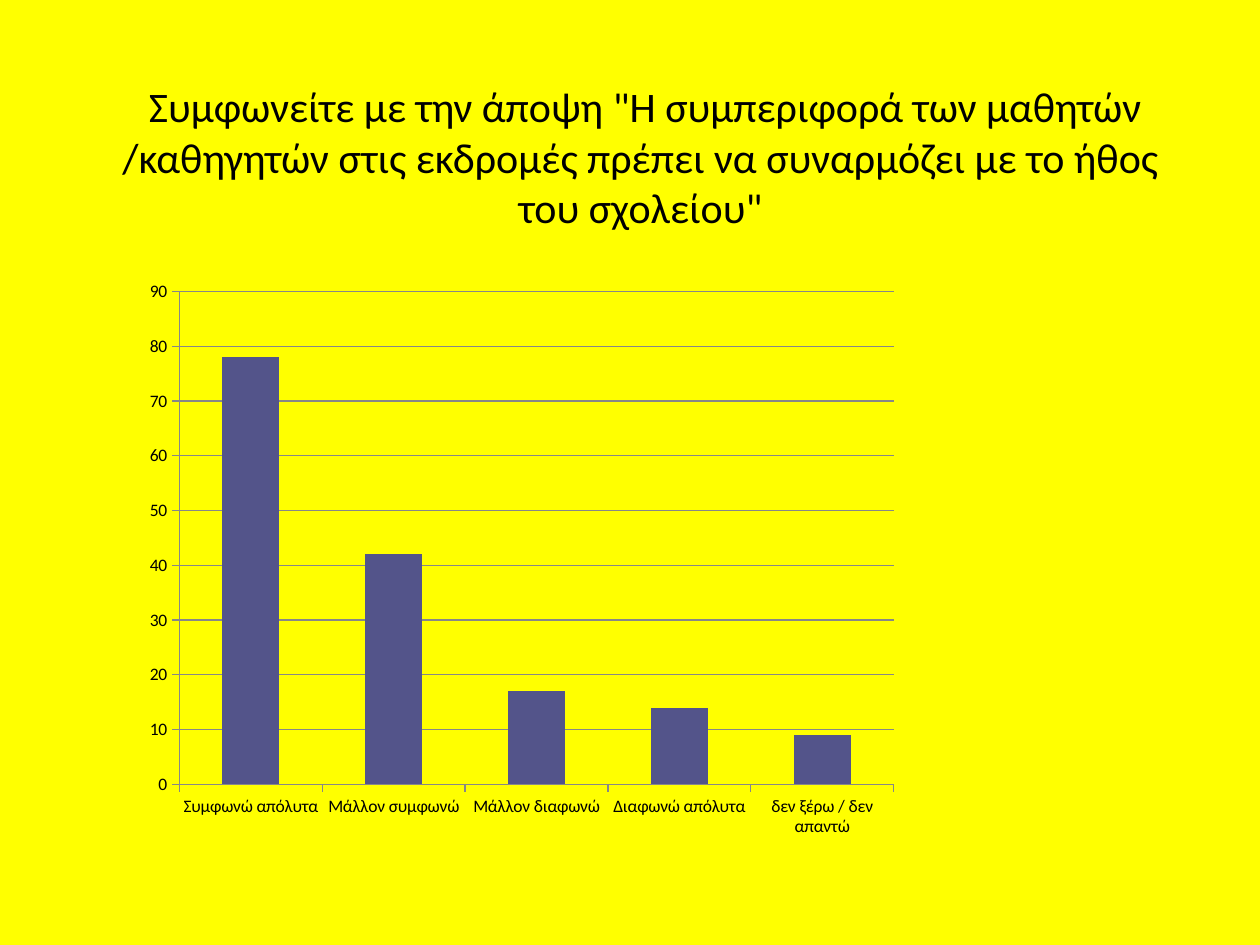
from dataclasses import dataclass

from pptx import Presentation
from pptx.chart.data import CategoryChartData
from pptx.dml.color import RGBColor
from pptx.enum.chart import XL_CHART_TYPE as ChartType, XL_TICK_MARK as TickMark
from pptx.enum.text import MSO_ANCHOR as Anchor, PP_ALIGN as Align
from pptx.oxml import parse_xml
from pptx.oxml.ns import nsdecls, qn
from pptx.util import Emu, Pt


@dataclass(frozen=True)
class Theme:
    """Colours, font and type sizes of the slide."""
    background: RGBColor = RGBColor(0xFF, 0xFF, 0x00)
    ink: RGBColor = RGBColor(0x00, 0x00, 0x00)
    bar: RGBColor = RGBColor(0x53, 0x54, 0x8A)
    rule: RGBColor = RGBColor(0x87, 0x87, 0x87)
    font: str = "Calibri"
    question_size: int = 24
    chart_size: int = 10


THEME = Theme()
PX_PER_INCH = 126
QUESTION = (' Συμφωνείτε με την άποψη "Η συμπεριφορά των μαθητών /καθηγητών '
            'στις εκδρομές πρέπει να συναρμόζει με το ήθος του σχολείου"')
ANSWERS = {
    "Συμφωνώ απόλυτα": 78,
    "Μάλλον συμφωνώ": 42,
    "Μάλλον διαφωνώ": 17,
    "Διαφωνώ απόλυτα": 14,
    "δεν ξέρω / δεν απαντώ": 9,
}
PLOT_LAYOUT = {"x": 0.06, "y": 0.075, "w": 0.758, "h": 0.776}


def px(length):
    """Turn pixels into EMU."""
    return Emu(round(length * 914400 / PX_PER_INCH))


def apply_format(target, values):
    """Set each attribute in the dict on the target."""
    for name, value in values.items():
        setattr(target, name, value)


def style_font(font, size):
    """Give a font the theme's face and ink colour."""
    apply_format(font, {"name": THEME.font, "size": Pt(size)})
    font.color.rgb = THEME.ink


def style_rule(line):
    """Draw a thin grey axis or grid line."""
    line.color.rgb = THEME.rule
    line.width = Pt(0.75)


def add_question(slide, left, top, width, height):
    """Add the survey question as a centred heading."""
    question = slide.shapes.add_textbox(*map(px, (left, top, width, height)))
    frame = question.text_frame
    apply_format(frame, {"word_wrap": True, "vertical_anchor": Anchor.MIDDLE})
    paragraph = frame.paragraphs[0]
    paragraph.alignment = Align.CENTER
    run = paragraph.add_run()
    run.text = QUESTION
    style_font(run.font, THEME.question_size)


def place_plot(chart, layout):
    """Fix the inner plot area as fractions of the chart."""
    plot_area = chart.plots[0]._element.getparent()
    for automatic in plot_area.findall(qn("c:layout")):
        plot_area.remove(automatic)
    modes = "".join(f'<c:{side}Mode val="edge"/>' for side in "xy")
    sizes = "".join(f'<c:{side} val="{share}"/>' for side, share in layout.items())
    plot_area.insert(0, parse_xml(
        f'<c:layout {nsdecls("c")}><c:manualLayout><c:layoutTarget val="inner"/>'
        f'{modes}{sizes}</c:manualLayout></c:layout>'))


def add_answers(slide, left, top, width, height):
    """Add the column chart of the answers."""
    data = CategoryChartData()
    data.categories = list(ANSWERS)
    data.add_series("Series 1", list(ANSWERS.values()))
    chart = slide.shapes.add_chart(
        ChartType.COLUMN_CLUSTERED, *map(px, (left, top, width, height)), data).chart
    apply_format(chart, {"has_legend": False, "has_title": False})
    style_font(chart.font, THEME.chart_size)

    columns = chart.plots[0]
    apply_format(columns, {"gap_width": 150, "vary_by_categories": False})
    bar_fill = columns.series[0].format.fill
    bar_fill.solid()
    bar_fill.fore_color.rgb = THEME.bar

    answer_axis, count_axis = chart.category_axis, chart.value_axis
    apply_format(count_axis, {"minimum_scale": 0, "maximum_scale": 90,
                              "major_unit": 10, "has_major_gridlines": True})
    style_rule(count_axis.major_gridlines.format.line)
    for axis in (answer_axis, count_axis):
        apply_format(axis, {"major_tick_mark": TickMark.OUTSIDE,
                            "minor_tick_mark": TickMark.NONE})
        style_rule(axis.format.line)
    place_plot(chart, PLOT_LAYOUT)


def main():
    """Build and save the survey slide."""
    deck = Presentation()
    apply_format(deck, {"slide_width": px(1260), "slide_height": px(945)})
    slide = deck.slides.add_slide(deck.slide_layouts[6])
    background = slide.background.fill
    background.solid()
    background.fore_color.rgb = THEME.background
    add_question(slide, 105, 55, 1071, 203)
    add_answers(slide, 123, 244, 942, 635)
    deck.save("out.pptx")


if __name__ == "__main__":
    main()
